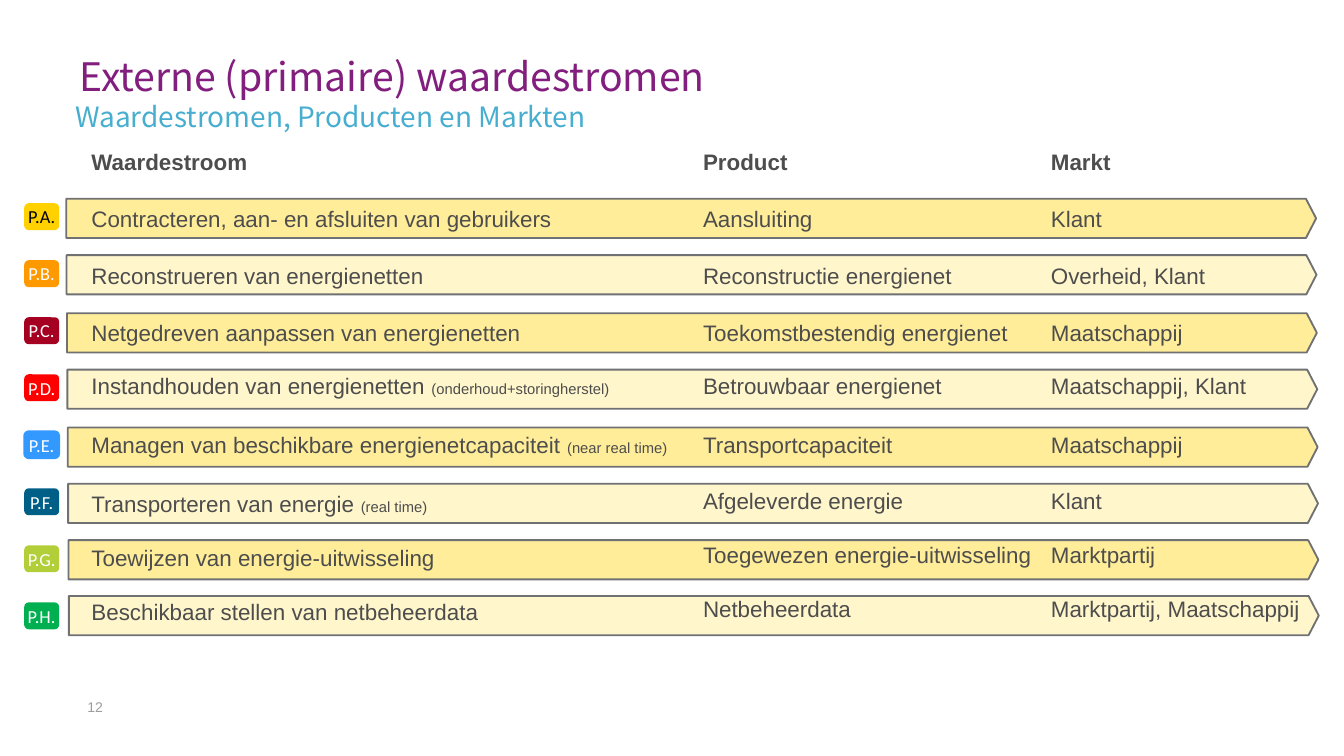
import pptx
import pptx.dml.color
import pptx.enum.shapes
import pptx.enum.text
import pptx.util

Pt = pptx.util.Pt
SHAPES = pptx.enum.shapes.MSO_SHAPE

BADGES = [
    ("P.A.", "FFD100"), ("P.B.", "FF9900"), ("P.C.", "A50021"), ("P.D.", "FF0000"),
    ("P.E.", "3399FF"), ("P.F.", "005F87"), ("P.G.", "B2CF39"), ("P.H.", "00B050"),
]
ARROW_TOPS = [106.5, 136.7, 167.8, 198, 229, 259.2, 289.4, 319.3]
STREAMS = [
    ("Waardestroom", ""),
    ("Contracteren, aan- en afsluiten van gebruikers", ""),
    ("Reconstrueren van energienetten", ""),
    ("Netgedreven aanpassen van energienetten", ""),
    ("Instandhouden van energienetten ", "(onderhoud+storingherstel)"),
    ("Managen van beschikbare energienetcapaciteit ", "(near real time)"),
    ("Transporteren van energie ", "(real time)"),
    ("Toewijzen van energie-uitwisseling", ""),
    ("Beschikbaar stellen van netbeheerdata", ""),
]
PRODUCTS = [
    "Product", "Aansluiting", "Reconstructie energienet", "Toekomstbestendig energienet",
    "Betrouwbaar energienet", "Transportcapaciteit", "Afgeleverde energie",
    "Toegewezen energie-uitwisseling", "Netbeheerdata",
]
MARKETS = [
    "Markt", "Klant", "Overheid, Klant", "Maatschappij", "Maatschappij, Klant",
    "Maatschappij", "Klant", "Marktpartij", "Marktpartij, Maatschappij",
]
STREAM_GAPS = [(0, 4.5), (4.5, 4.5), (4.5, 4.5), (4.5, 2), (4.5, 2), (8, 2), (8, 4.5), (3, 4.5), (3, 4.5)]
OTHER_GAPS = STREAM_GAPS[:5] + [(8, 4.5), (4, 4.5)] + STREAM_GAPS[7:]


def color(code):
    """Return the colour for a hex string."""
    return pptx.dml.color.RGBColor.from_string(code)


def set_font(font, name, size, code, bold=False):
    """Set the typeface, size, colour and weight of a font."""
    font.name = name
    font.size = Pt(size)
    font.bold = bold
    font.color.rgb = color(code)


def add_box(page, left, top, width, height):
    """Add an empty text box without margins and return its frame."""
    frame = page.shapes.add_textbox(Pt(left), Pt(top), Pt(width), Pt(height)).text_frame
    frame.word_wrap = True
    frame.margin_left = frame.margin_right = frame.margin_top = frame.margin_bottom = 0
    return frame


def add_line(page, box, text, name, size, code, spacing=None):
    """Add a text box holding one line."""
    para = add_box(page, *box).paragraphs[0]
    para.text = text
    para.line_spacing = spacing
    set_font(para.font, name, size, code)


def add_shape(page, kind, left, top, width, height, fill):
    """Add a filled preset shape without shadow or outline."""
    shape = page.shapes.add_shape(kind, Pt(left), Pt(top), Pt(width), Pt(height))
    shape.shadow.inherit = False
    shape.fill.solid()
    shape.fill.fore_color.rgb = color(fill)
    shape.line.fill.background()
    return shape


def add_arrows(page, left, width, height):
    """Add the value stream arrows in alternating yellows."""
    for index, top in enumerate(ARROW_TOPS):
        fill = "FFF6CC" if index % 2 else "FFED99"
        arrow = add_shape(page, SHAPES.PENTAGON, left + 0.2 * index, top, width, height, fill)
        arrow.adjustments[0] = 0.259
        arrow.line.color.rgb = color("707173")
        arrow.line.width = Pt(1)


def add_badges(page, left, top, width, height, pitch):
    """Add the coloured code badges in front of the arrows."""
    for index, (code, fill) in enumerate(BADGES):
        badge = add_shape(page, SHAPES.ROUNDED_RECTANGLE, left, top + index * pitch, width, height, fill)
        if code == "P.E.":
            badge.line.color.rgb = color(fill)
            badge.line.width = Pt(1)
        frame = badge.text_frame
        frame.margin_left = frame.margin_right = 0
        frame.margin_top = frame.margin_bottom = Pt(3.6)
        frame.vertical_anchor = pptx.enum.text.MSO_ANCHOR.MIDDLE
        para = frame.paragraphs[0]
        para.text = code
        para.alignment = pptx.enum.text.PP_ALIGN.CENTER
        set_font(para.font, "Calibri", 9.8, "000000" if index == 0 else "FFFFFF")


def add_column(page, box, entries, gaps):
    """Add a column with a bold heading and one paragraph per stream."""
    frame = add_box(page, *box)
    for index, ((text, note), (before, after)) in enumerate(zip(entries, gaps)):
        para = frame.add_paragraph() if index else frame.paragraphs[0]
        para.line_spacing = 1.5
        para.space_before = Pt(before)
        para.space_after = Pt(after)
        set_font(para.font, "Arial", 12, "4D4D4D", bold=index == 0)
        para.add_run().text = text
        if note:
            span = para.add_run()
            span.text = note
            span.font.size = Pt(7.9)


def main():
    """Build and save the slide."""
    deck = pptx.Presentation()
    deck.slide_width, deck.slide_height = Pt(720), Pt(405)
    page = deck.slides.add_slide(deck.slide_layouts[6])
    add_line(page, (46.8, 374.4, 28, 17.3), "12", "Arial", 7.5, "9E9C9E")
    add_arrows(page, 35.5, 669.6, 21)
    add_column(page, (376.6, 72, 254, 268.6), [(text, "") for text in PRODUCTS], OTHER_GAPS)
    add_column(page, (49, 72, 530.6, 268.6), STREAMS, STREAM_GAPS)
    add_column(page, (563, 72, 142, 268.6), [(text, "") for text in MARKETS], OTHER_GAPS)
    heading = "Noto Sans CJK TC"
    add_line(page, (42.5, 25.2, 524, 28), "Externe (primaire) waardestromen", heading, 21, "821E7D", Pt(28))
    add_line(page, (40.3, 49.7, 599, 17.3), "Waardestromen, Producten en Markten", heading, 15, "48AED0", 1.2)
    add_badges(page, 13, 108.9, 18.7, 14.4, 30.55)
    deck.save("out.pptx")


if __name__ == "__main__":
    main()
